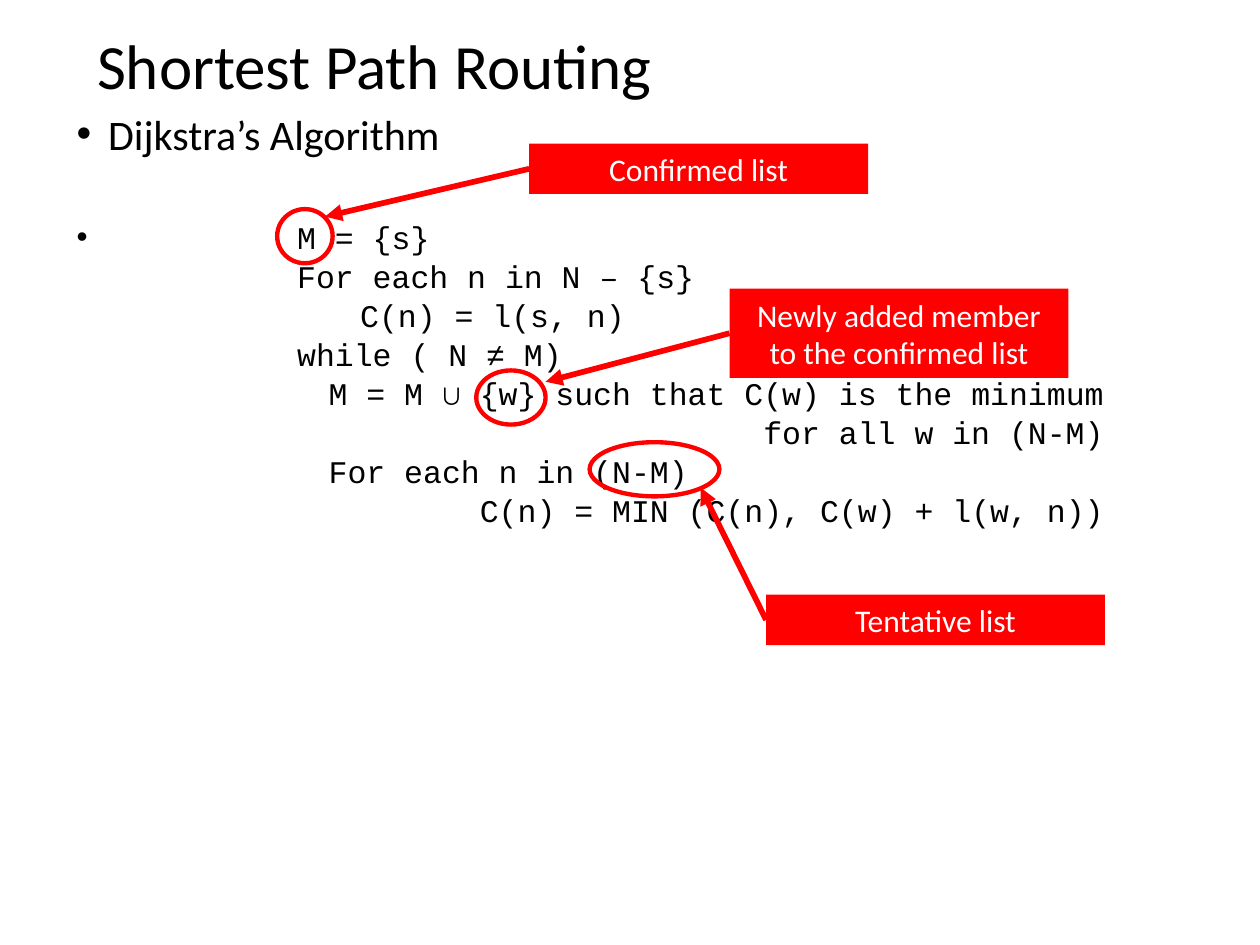
from lxml import etree
from pptx import Presentation
from pptx.dml.color import RGBColor
from pptx.enum import shapes, text
from pptx.oxml.ns import qn
from pptx.util import Inches, Pt

RED, BLACK, WHITE = "FF0000", "000000", "FFFFFF"
TITLE = "Shortest Path Routing"
# text, font, size, space before, left margin, bullet hang
LINES = [
    ("Dijkstra’s Algorithm", "Calibri", 24, 10, 0.25, 0.25),
    ("M = {s}", "Courier New", 18, 38, 1.75, 1.75),
    ("For each n in N – {s}", "Courier New", 18, 5, 1.75, 0),
    ("C(n) = l(s, n)", "Courier New", 18, 5, 2.25, 0),
    ("while ( N ≠ M)", "Courier New", 18, 5, 1.75, 0),
    ("M = M ∪ {w} such that C(w) is the minimum", "Courier New", 18, 5, 2, 0),
    ("for all w in (N-M)", "Courier New", 18, 5, 5.45, 0),
    ("For each n in (N-M)", "Courier New", 18, 5, 2, 0),
    ("C(n) = MIN (C(n), C(w) + l(w, n))", "Courier New", 18, 5, 3.2, 0),
]
CALLOUTS = [
    {"label": "Confirmed list", "ring": (2.2, 1.66, 0.44, 0.43),
     "box": (4.2, 1.14, 2.69, 0.4), "tip": (2.58, 1.72)},
    {"label": "Tentative list", "ring": (4.68, 3.51, 1.03, 0.43),
     "box": (6.08, 4.72, 2.69, 0.4), "tip": (5.56, 3.87)},
    {"label": "Newly added member to the confirmed list", "ring": (3.78, 2.94, 0.55, 0.43),
     "box": (5.79, 2.29, 2.69, 0.71), "tip": (4.33, 3.03)},
]


def inches(values):
    return [Inches(value) for value in values]


def color(value):
    return RGBColor.from_string(value)


def set_font(paragraph, name, size, value):
    paragraph.font.name = name
    paragraph.font.size = Pt(size)
    paragraph.font.color.rgb = color(value)


def add_title(slide):
    title = slide.shapes.title
    title.left, title.top, title.width, title.height = inches((0.67, 0.19, 9.06, 0.71))
    title.text_frame.text = TITLE
    title.text_frame.vertical_anchor = text.MSO_ANCHOR.MIDDLE
    paragraph = title.text_frame.paragraphs[0]
    paragraph.alignment = text.PP_ALIGN.LEFT
    paragraph.line_spacing = 0.9
    set_font(paragraph, "Calibri", 36, BLACK)


def add_algorithm(slide):
    frame = slide.shapes.add_textbox(*inches((0.51, 0.89, 8.82, 6.61))).text_frame
    frame.word_wrap = True
    for index, (words, font, size, before, margin, hang) in enumerate(LINES):
        paragraph = frame.add_paragraph() if index else frame.paragraphs[0]
        paragraph.text = words
        paragraph.line_spacing = 0.8
        paragraph.space_before = Pt(before)
        set_font(paragraph, font, size, BLACK)
        properties = paragraph._p.get_or_add_pPr()
        properties.set("marL", str(Inches(margin)))
        properties.set("indent", str(-Inches(hang)))
        if hang:
            bullet_font = etree.Element(qn("a:buFont"), typeface="Arial")
            bullet = etree.Element(qn("a:buChar"), char="•")
            properties.find(qn("a:defRPr")).addprevious(bullet_font)
            bullet_font.addnext(bullet)


def add_callout(slide, label, ring, box, tip):
    group = slide.shapes.add_group_shape().shapes
    circle = group.add_shape(shapes.MSO_SHAPE.OVAL, *inches(ring))
    circle.shadow.inherit = False
    circle.fill.background()
    circle.line.color.rgb = color(RED)
    circle.line.width = Pt(2.5)

    panel = group.add_shape(shapes.MSO_SHAPE.RECTANGLE, *inches(box))
    panel.shadow.inherit = False
    panel.fill.solid()
    panel.fill.fore_color.rgb = color(RED)
    panel.line.fill.background()
    panel.text_frame.word_wrap = True
    panel.text_frame.text = label
    paragraph = panel.text_frame.paragraphs[0]
    paragraph.alignment = text.PP_ALIGN.CENTER
    set_font(paragraph, "Calibri", 18, WHITE)

    left, top, _, height = box
    start = (left, top + height / 2)
    arrow = group.add_connector(shapes.MSO_CONNECTOR.STRAIGHT, *inches(start + tip))
    arrow.line.color.rgb = color(RED)
    arrow.line.width = Pt(3.25)
    etree.SubElement(arrow.line._get_or_add_ln(), qn("a:tailEnd"), type="triangle")
    etree.SubElement(arrow._element.spPr, qn("a:effectLst"))


def main():
    deck = Presentation()
    deck.slide_width, deck.slide_height = inches((10, 7.5))
    slide = deck.slides.add_slide(deck.slide_layouts[5])
    add_title(slide)
    add_algorithm(slide)
    for callout in CALLOUTS:
        add_callout(slide, **callout)
    deck.save("out.pptx")


if __name__ == "__main__":
    main()
